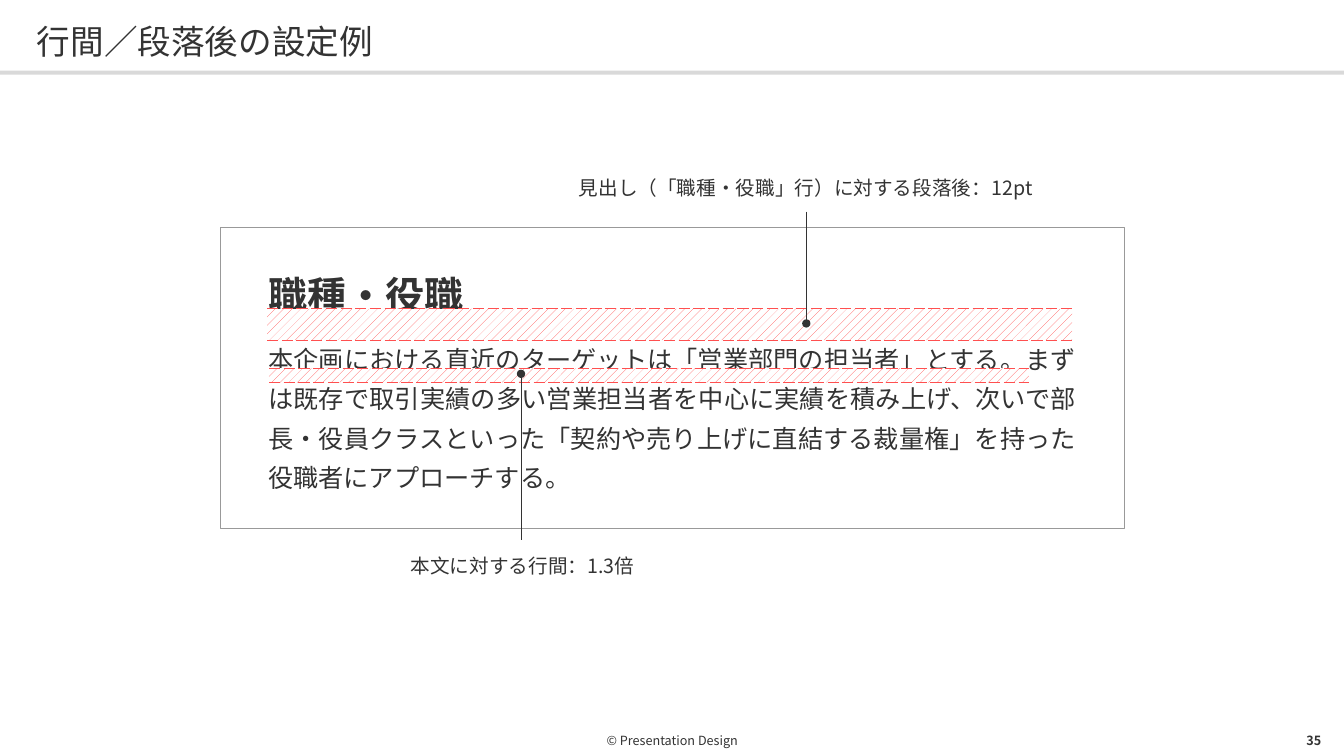
"""Build a slide showing example settings for line and paragraph spacing."""
from lxml import etree
from pptx import Presentation
from pptx.dml.color import RGBColor
from pptx.enum.dml import MSO_PATTERN
from pptx.enum.shapes import MSO_CONNECTOR, MSO_SHAPE
from pptx.enum.text import MSO_ANCHOR, MSO_AUTO_SIZE, PP_ALIGN
from pptx.oxml.ns import qn
from pptx.util import Cm, Pt

RECTANGLE = MSO_SHAPE.RECTANGLE
STRAIGHT = MSO_CONNECTOR.STRAIGHT
DOTTED = MSO_PATTERN.PERCENT_20
TOP, MIDDLE = MSO_ANCHOR.TOP, MSO_ANCHOR.MIDDLE
LEFT, CENTER, RIGHT, JUSTIFY = PP_ALIGN.LEFT, PP_ALIGN.CENTER, PP_ALIGN.RIGHT, PP_ALIGN.JUSTIFY
FIXED, GROW = MSO_AUTO_SIZE.NONE, MSO_AUTO_SIZE.SHAPE_TO_FIT_TEXT
FONT = "Noto Sans CJK JP"
INK, GRAY, RULE, RED, WHITE = "333333", "999999", "D9D9D9", "FF5050", "FFFFFF"


def color(value):
    """Return the colour for a hex string."""
    return RGBColor.from_string(value)


def write(box, paragraphs, anchor=MIDDLE, auto_size=FIXED, margins=(0, 0, 0, 0)):
    """Fill a box with (text, size, bold, paragraph format) entries."""
    frame = box.text_frame
    left, top, right, bottom = map(Cm, margins)
    frame_format = {
        "word_wrap": True, "auto_size": auto_size, "vertical_anchor": anchor,
        "margin_left": left, "margin_top": top, "margin_right": right, "margin_bottom": bottom,
    }
    for name, value in frame_format.items():
        setattr(frame, name, value)
    for index, (text, size, bold, para_format) in enumerate(paragraphs):
        para = frame.add_paragraph() if index else frame.paragraphs[0]
        for name, value in para_format.items():
            setattr(para, name, value)
        span = para.add_run()
        span.text = text
        for name, value in {"name": FONT, "size": Pt(size), "bold": bold}.items():
            setattr(span.font, name, value)
        span.font.color.rgb = color(INK)
        etree.SubElement(span.font._element, qn("a:ea"), typeface=FONT)


deck = Presentation()
deck.slide_width, deck.slide_height = Cm(33.87), Cm(19.05)
page = deck.slides.add_slide(deck.slide_layouts[5])
shapes = page.shapes

header_rule = shapes.add_shape(RECTANGLE, 0, Cm(1.78), deck.slide_width, Cm(0.1))
header_rule.shadow.inherit = False
header_rule.fill.solid()
header_rule.fill.fore_color.rgb = color(RULE)
header_rule.line.fill.background()

title = shapes.title
title_place = {"left": Cm(0.93), "top": Cm(0.43), "width": Cm(32), "height": Cm(1.09)}
for name, value in title_place.items():
    setattr(title, name, value)
write(title, [("行間／段落後の設定例", 24, False, {"alignment": LEFT, "line_spacing": 1.1})])

footers = [
    ("© Presentation Design", 2.44, 29, False, CENTER),
    ("35", 32.03, 1.27, True, RIGHT),
]
for text, left, width, bold, alignment in footers:
    footer = shapes.add_textbox(Cm(left), Cm(18.31), Cm(width), Cm(0.72))
    write(footer, [(text, 9, bold, {"alignment": alignment})])

heading_format = {
    "alignment": LEFT, "line_spacing": 1.1, "space_before": Pt(24), "space_after": Pt(12),
}
body_format = {"alignment": JUSTIFY, "line_spacing": 1.3}
caption_format = {"alignment": CENTER, "line_spacing": 1.2}
body_text = (
    "本企画における直近のターゲットは「営業部門の担当者」とする。"
    "まずは既存で取引実績の多い営業担当者を中心に実績を積み上げ、"
    "次いで部長・役員クラスといった「契約や売り上げに直結する裁量権」を持った"
    "役職者にアプローチする。"
)
sample = [("職種・役職", 28, True, heading_format), (body_text, 18, False, body_format)]
after_caption = [("見出し（「職種・役職」行）に対する段落後：12pt", 14, False, caption_format)]
line_caption = [("本文に対する行間：1.3倍", 14, False, caption_format)]
text_boxes = [
    (5.56, 5.72, 22.77, 7.6, sample, (1.2, 1, 1.2, 0.9), GRAY),
    (14.17, 4.32, 12.27, 0.68, after_caption, (0, 0, 0, 0), None),
    (9.4, 13.84, 7.54, 0.68, line_caption, (0, 0, 0, 0), None),
]
for left, top, width, height, paragraphs, margins, outline in text_boxes:
    box = shapes.add_shape(RECTANGLE, Cm(left), Cm(top), Cm(width), Cm(height))
    box.shadow.inherit = False
    box.fill.background()
    if outline:
        box.line.color.rgb = color(outline)
        box.line.width = Pt(0.5)
    else:
        box.line.fill.background()
    write(box, paragraphs, TOP, GROW, margins)

gap_bands = [(6.73, 7.78, 20.29, 0.79), (6.78, 9.28, 19.15, 0.36)]
for left, top, width, height in gap_bands:
    band = shapes.add_table(1, 1, Cm(left), Cm(top), Cm(width), Cm(height)).table
    band.first_row = band.horz_banding = False
    cell = band.cell(0, 0)
    for side in ("left", "top", "right", "bottom"):
        setattr(cell, f"margin_{side}", 0)
    cell.fill.patterned()
    cell.fill.pattern = DOTTED
    cell.fill.fore_color.rgb = color(RED)
    cell.fill.back_color.rgb = color(WHITE)
    etree.SubElement(cell.text_frame.paragraphs[0]._p, qn("a:endParaRPr"), sz="100")
    properties = cell._tc.get_or_add_tcPr()
    for index, side in enumerate(("lnL", "lnR", "lnT", "lnB")):
        border = etree.Element(qn(f"a:{side}"), w=str(Pt(0.5)))
        if side in ("lnT", "lnB"):
            fill = etree.SubElement(border, qn("a:solidFill"))
            etree.SubElement(fill, qn("a:srgbClr"), val=RED)
            etree.SubElement(border, qn("a:prstDash"), val="dash")
        else:
            etree.SubElement(border, qn("a:noFill"))
        properties.insert(index, border)

leaders = [(20.32, 5.33, 8.15, "tailEnd"), (13.13, 9.42, 13.61, "headEnd")]
for x, start, end, dot in leaders:
    leader = shapes.add_connector(STRAIGHT, Cm(x), Cm(start), Cm(x), Cm(end))
    leader.line.color.rgb = color(INK)
    leader.line.width = Pt(0.5)
    etree.SubElement(leader.line._get_or_add_ln(), qn(f"a:{dot}"), type="oval")
    etree.SubElement(leader._element.spPr, qn("a:effectLst"))

deck.save("out.pptx")
